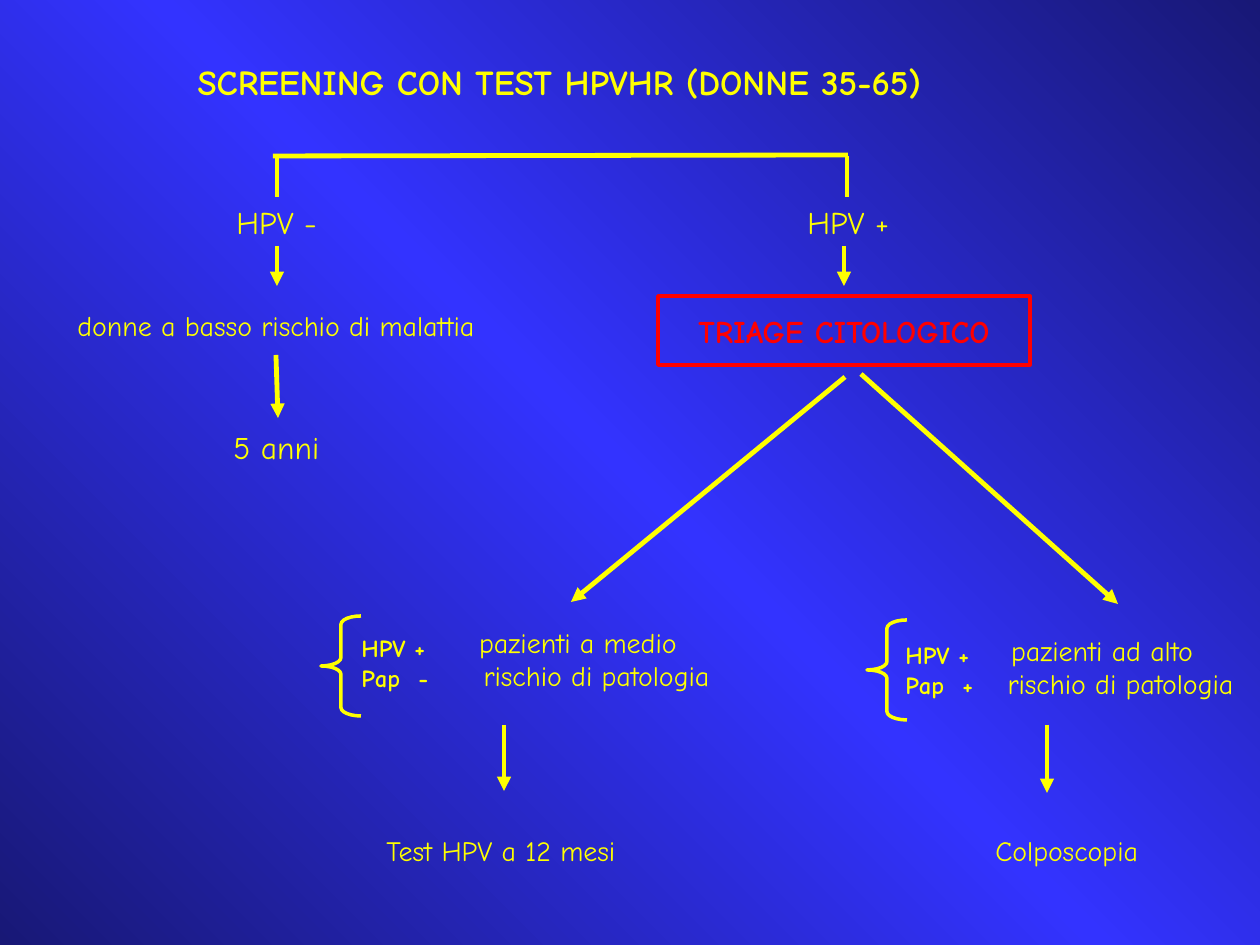
"""Builds a one-slide flow chart of HPV screening."""
from copy import deepcopy

from pptx import Presentation
from pptx.dml.color import RGBColor
from pptx.enum.shapes import MSO_CONNECTOR as Link, MSO_SHAPE as Preset
from pptx.enum.text import MSO_ANCHOR as Anchor, MSO_AUTO_SIZE as AutoSize, PP_ALIGN as Align
from pptx.oxml.ns import qn
from pptx.util import Emu, Inches, Pt
from lxml.etree import SubElement

COLORS = {"ink": "FFFF00", "alert": "FF0000", "glow": "3333FF", "dusk": "181876"}
FONT = "Comic Neue"
PX = Inches(1) / 126


def px(length):
    """Turns pixels into EMU."""
    return Emu(round(length * PX))


def color(name):
    """Gives a named colour."""
    return RGBColor.from_string(COLORS[name])


class FlowChart:
    """Holds the style and the current slide."""

    def __init__(self, page):
        self.page = page

    def background(self):
        """Fills the slide with a diagonal band of light."""
        fill = self.page.background.fill
        fill.gradient()
        fill.gradient_angle = 45
        stops = self.page.element.xpath(".//a:gsLst")[0]
        stops.insert(1, deepcopy(stops[0]))
        for stop, name, place in zip(fill.gradient_stops, ("dusk", "glow", "dusk"), (0, 0.5, 1)):
            stop.color.rgb = color(name)
            stop.position = place

    def add_lines(self, shape, lines, size, bold=False, align=Align.LEFT, ink="ink",
                  indent=0, tab=0):
        """Sets lines of text, the later ones with an indent or a tab stop."""
        frame = shape.text_frame
        frame.word_wrap = False
        for index, line in enumerate(lines):
            para = frame.paragraphs[0] if index == 0 else frame.add_paragraph()
            para.alignment = align
            props = para._p.get_or_add_pPr()
            if index and indent:
                props.set("marL", str(px(indent)))
                props.set("indent", "0")
            if index and tab:
                stops = SubElement(props, qn("a:tabLst"))
                SubElement(stops, qn("a:tab"), pos=str(px(tab)), algn="l")
            span = para.add_run()
            span.text = line
            span.font.name = FONT
            span.font.size = Pt(size)
            span.font.bold = bold
            span.font.color.rgb = color(ink)

    def title(self, line, left, top, width, height):
        """Places the slide title."""
        box = self.page.shapes.title
        box.left, box.top, box.width, box.height = map(px, (left, top, width, height))
        self.add_lines(box, [line], 20, bold=True)
        box.text_frame.auto_size = AutoSize.SHAPE_TO_FIT_TEXT
        box.text_frame.vertical_anchor = Anchor.TOP

    def text(self, lines, left, top, width, height, size=16, **style):
        """Adds a text box."""
        box = self.page.shapes.add_textbox(*map(px, (left, top, width, height)))
        self.add_lines(box, lines, size, **style)
        box.text_frame.auto_size = AutoSize.SHAPE_TO_FIT_TEXT

    def outline(self, preset, left, top, width, height, ink="ink"):
        """Adds a preset shape without fill."""
        shape = self.page.shapes.add_shape(preset, *map(px, (left, top, width, height)))
        shape.shadow.inherit = False
        shape.fill.background()
        shape.line.color.rgb = color(ink)
        shape.line.width = Pt(2)
        return shape

    def frame(self, line, left, top, width, height):
        """Adds a red frame with a label."""
        shape = self.outline(Preset.RECTANGLE, left, top, width, height, "alert")
        self.add_lines(shape, [line], 18, bold=True, align=Align.CENTER, ink="alert")
        shape.text_frame.vertical_anchor = Anchor.MIDDLE

    def brace(self, left, top):
        """Adds a left brace."""
        shape = self.outline(Preset.LEFT_BRACE, left, top, 40, 100)
        shape.adjustments[0] = 0.21

    def line(self, x1, y1, x2, y2, arrow=True):
        """Adds a line, with an arrowhead at its end on demand."""
        link = self.page.shapes.add_connector(Link.STRAIGHT, *map(px, (x1, y1, x2, y2)))
        link.line.color.rgb = color("ink")
        link.line.width = Pt(2.75)
        if arrow:
            SubElement(link.line._get_or_add_ln(), qn("a:tailEnd"), type="triangle")
        SubElement(link._element.spPr, qn("a:effectLst"))


def main():
    """Draws the slide and saves it."""
    deck = Presentation()
    deck.slide_width, deck.slide_height = Inches(10), Inches(7.5)
    chart = FlowChart(deck.slides.add_slide(deck.slide_layouts[5]))
    chart.background()
    chart.title("SCREENING CON TEST HPVHR (DONNE 35-65)", 185, 54, 877, 55)

    chart.line(273, 156, 848, 155, arrow=False)
    for result, left, stem, arrow in (("HPV -", 224, 277, 277), ("HPV +", 795, 847, 844)):
        chart.line(stem, 156, stem, 197, arrow=False)
        chart.text([result], left, 197, 111, 50, size=18)
        chart.line(arrow, 246, arrow, 286)

    chart.text(["donne a basso rischio di malattia"], 49, 302, 454, 47, align=Align.CENTER)
    chart.line(276, 355, 278, 418)
    chart.text(["5 anni"], 221, 422, 112, 50, size=18)

    chart.frame("TRIAGE CITOLOGICO", 658, 296, 372, 69)
    chart.line(845, 377, 571, 602)
    chart.line(861, 374, 1118, 604)

    outcomes = (
        ("-", "pazienti a medio", "Test HPV a 12 mesi",
         (321, 616), (349, 627), (426, 619), (504, 791), (374, 276)),
        ("+", "pazienti ad alto", "Colposcopia",
         (867, 620), (893, 634), (950, 627), (1047, 793), (983, 174)),
    )
    for pap, patients, step, brace, tests, risk, (x, tip), (left, width) in outcomes:
        chart.brace(*brace)
        chart.text(["HPV +", f"Pap\t{pap}"], *tests, 102, 72, size=14, bold=True, tab=57)
        chart.text([patients, "rischio di patologia"], *risk, 304, 81,
                   align=Align.CENTER, indent=37)
        chart.line(x, 725, x, tip)
        chart.text([step], left, 827, width, 47)

    deck.save("out.pptx")


if __name__ == "__main__":
    main()
